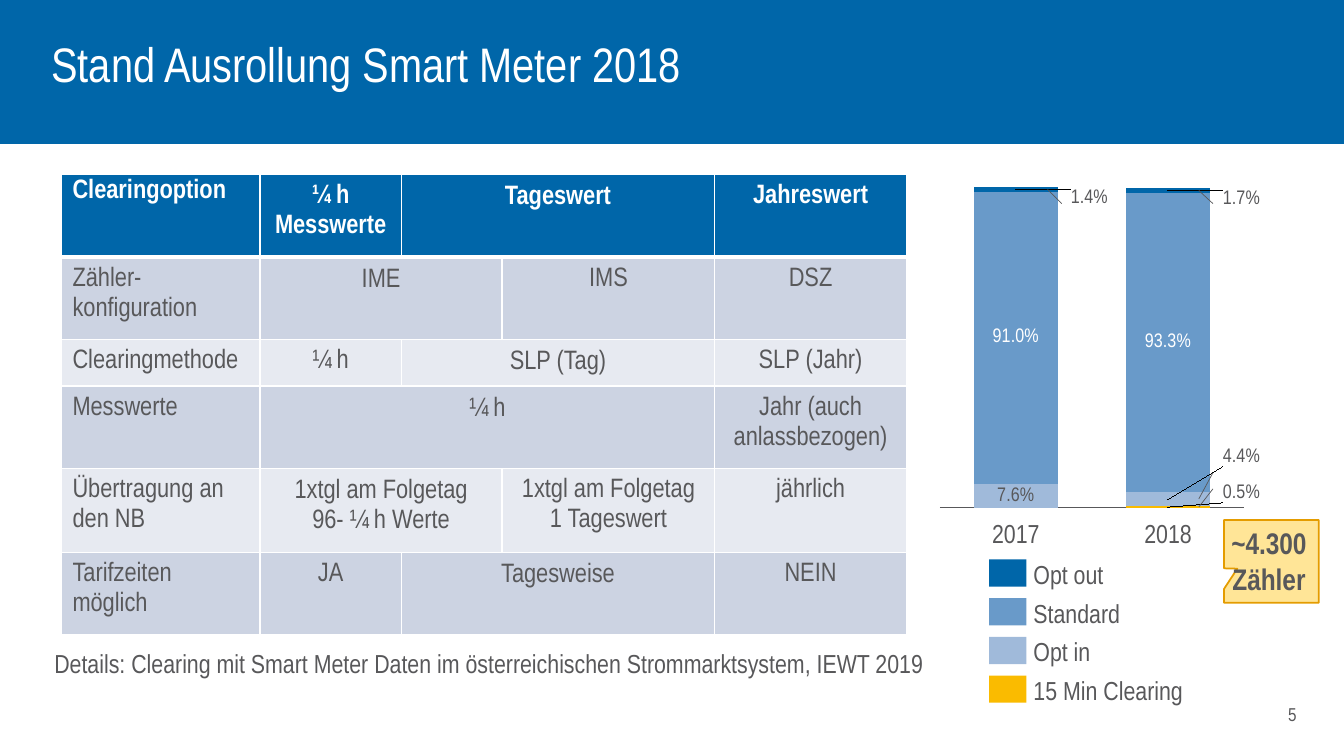
from pptx import Presentation, oxml
from pptx import util as u
from pptx.chart import data as chart_data
from pptx.dml import color as dml
from pptx.enum import chart as charts, shapes, text
from pptx.oxml import ns

FONT = "Arial Narrow"
COLORS = {"blue": "0066A9", "mid": "699AC9", "light": "A0BADA", "yellow": "FABB00",
          "gray": "58585A", "white": "FFFFFF", "band": "CCD3E2", "pale": "E7EAF1",
          "note": "FFE597", "note_line": "E49C00"}
RGB = {name: dml.RGBColor.from_string(value) for name, value in COLORS.items()}
LEFT, CENTER, RIGHT = text.PP_ALIGN.LEFT, text.PP_ALIGN.CENTER, text.PP_ALIGN.RIGHT
MIDDLE, TOP = text.MSO_ANCHOR.MIDDLE, text.MSO_ANCHOR.TOP

presentation = Presentation()
presentation.slide_width, presentation.slide_height = u.Inches(13.33), u.Inches(7.5)
slide = presentation.slides.add_slide(presentation.slide_layouts[5])


def write(frame, content, size, color="gray", align=LEFT, bold=False, spacing=None,
          margins=(0, 0, 0, 0), anchor=TOP, wrap=True):
    frame.text = content
    sides = ("margin_left", "margin_top", "margin_right", "margin_bottom")
    settings = dict(zip(sides, map(u.Inches, margins)))
    settings.update(vertical_anchor=anchor, word_wrap=wrap)
    for name, value in settings.items():
        setattr(frame, name, value)
    for paragraph in frame.paragraphs:
        paragraph.alignment = align
        paragraph.line_spacing = spacing
        for name, value in {"name": FONT, "size": u.Pt(size), "bold": bold}.items():
            setattr(paragraph.font, name, value)
        paragraph.font.color.rgb = RGB[color]


def add_box(kind, left, top, width, height, fill, line=None, line_width=1):
    shape = slide.shapes.add_shape(kind, *map(u.Inches, (left, top, width, height)))
    shape.shadow.inherit = False
    shape.fill.solid()
    shape.fill.fore_color.rgb = RGB[fill]
    if line:
        shape.line.color.rgb = RGB[line]
        shape.line.width = u.Pt(line_width)
    else:
        shape.line.fill.background()
    return shape


# Title on a blue band
title = slide.shapes.title
title.left, title.top = u.Inches(0.51), u.Inches(0.39)
title.width, title.height = u.Inches(10.92), u.Inches(0.52)
write(title.text_frame, "Stand Ausrollung Smart Meter 2018", 34.6, "white",
      margins=(0, 0, 0, 0.04), anchor=MIDDLE)
title.text_frame.auto_size = text.MSO_AUTO_SIZE.NONE
band = add_box(shapes.MSO_SHAPE.RECTANGLE, 0, 0, 13.33, 1.42, "blue", "blue")
title.element.addprevious(band.element)

# Table: each entry is text and number of columns covered
ROWS = [
    [("Clearingoption", 1), ("¼ h Messwerte", 1), ("Tageswert", 2), ("Jahreswert", 1)],
    [("Zähler-konfiguration", 1), ("IME", 2), ("IMS", 1), ("DSZ", 1)],
    [("Clearingmethode", 1), ("¼ h", 1), ("SLP (Tag)", 2), ("SLP (Jahr)", 1)],
    [("Messwerte", 1), ("¼ h", 3), ("Jahr (auch anlassbezogen)", 1)],
    [("Übertragung an den NB", 1), ("1xtgl am Folgetag\n96- ¼ h Werte", 2),
     ("1xtgl am Folgetag\n1 Tageswert", 1), ("jährlich", 1)],
    [("Tarifzeiten möglich", 1), ("JA", 1), ("Tagesweise", 2), ("NEIN", 1)],
]
WIDTHS = [1.97, 1.4, 1, 2.11, 1.9]
HEIGHTS = [0.82, 0.82, 0.46, 0.82, 0.83, 0.82]
table = slide.shapes.add_table(len(ROWS), len(WIDTHS), u.Inches(0.61), u.Inches(1.73),
                               u.Inches(8.38), u.Inches(4.57)).table
table.horz_banding = False
for column, width in zip(table.columns, WIDTHS):
    column.width = u.Inches(width)
for row, (entries, height) in enumerate(zip(ROWS, HEIGHTS)):
    table.rows[row].height = u.Inches(height)
    fill = "blue" if row == 0 else "band" if row % 2 else "pale"
    for cell in table.rows[row].cells:
        properties = cell._tc.get_or_add_tcPr()
        for side in "LRTB":
            heavy = (row, side) in [(0, "B"), (1, "T")]
            properties.append(oxml.parse_xml(
                f'<a:ln{side} {ns.nsdecls("a")} w="{u.Pt(3 if heavy else 1)}"><a:solidFill>'
                f'<a:srgbClr val="{COLORS["white"]}"/></a:solidFill></a:ln{side}>'))
        cell.fill.solid()
        cell.fill.fore_color.rgb = RGB[fill]
    column = 0
    for content, span in entries:
        cell = table.cell(row, column)
        if span > 1:
            cell.merge(table.cell(row, column + span - 1))
        write(cell.text_frame, content, 19, "gray" if row else "white",
              CENTER if column else LEFT, bold=row == 0,
              spacing=None if row == column == 0 else 1.2)
        side, edge = (0.12, 0.06) if span > 1 else (0.11, 0.05)
        for name, value in {"margin_left": side, "margin_right": side,
                            "margin_top": edge, "margin_bottom": edge}.items():
            setattr(cell, name, u.Inches(value))
        column += span

# Page number
page = slide.shapes.add_textbox(*map(u.Inches, (11.29, 6.95, 1.57, 0.26)))
write(page.text_frame, "5", 13.3, align=RIGHT, anchor=MIDDLE)

# Stacked chart: values, bar colours, label colours, label offsets per layer
LAYERS = [
    ((7.6, 0.5), ("light", "yellow"), ("gray", "gray"), (None, (0.178, -0.04))),
    ((91, 4.4), ("mid", "light"), ("white", "gray"), (None, (0.178, -0.123))),
    ((1.4, 93.3), ("blue", "mid"), ("gray", "white"), ((0.178, 0.025), None)),
    ((None, 1.7), ("blue", "blue"), ("gray", "gray"), (None, (0.178, 0.025))),
]
YEARS = ["2017", "2018"]
shares = chart_data.CategoryChartData(number_format='0.0"%"')
shares.categories = YEARS
for number, layer in enumerate(LAYERS, 1):
    shares.add_series(f"Series {number}", layer[0])
chart = slide.shapes.add_chart(charts.XL_CHART_TYPE.COLUMN_STACKED,
                               *map(u.Inches, (8.78, 1.74, 4.1, 3.42)), shares).chart
chart.has_legend = chart.has_title = False
chart.font.name, chart.font.size = FONT, u.Pt(10)
chart.font.color.rgb = RGB["gray"]
plot = chart.plots[0]
for name, value in {"gap_width": 80, "overlap": 100, "vary_by_categories": False}.items():
    setattr(plot, name, value)
for name, value in {"minimum_scale": 0, "maximum_scale": 100, "visible": False,
                    "has_major_gridlines": False}.items():
    setattr(chart.value_axis, name, value)
axis = chart.category_axis
axis.tick_label_position = charts.XL_TICK_LABEL_POSITION.NONE
axis.major_tick_mark = axis.minor_tick_mark = charts.XL_TICK_MARK.NONE
axis.format.line.color.rgb = RGB["gray"]
axis.format.line.width = u.Pt(0.75)

plot_area = chart.element.xpath("c:chart/c:plotArea")[0]
for layout in plot_area.xpath("c:layout"):
    plot_area.remove(layout)
plot_area.insert(0, oxml.parse_xml(
    f'<c:layout {ns.nsdecls("c")}><c:manualLayout><c:layoutTarget val="inner"/>'
    '<c:xMode val="edge"/><c:yMode val="edge"/><c:x val="0.132"/><c:y val="0.035"/>'
    '<c:w val="0.736"/><c:h val="0.93"/></c:manualLayout></c:layout>'))

for series, (values, fills, label_colors, offsets) in zip(plot.series, LAYERS):
    series.format.fill.solid()
    series.format.fill.fore_color.rgb = RGB[fills[0]]
    for index, value in enumerate(values):
        if value is None:
            continue
        point = series.points[index]
        point.format.fill.solid()
        point.format.fill.fore_color.rgb = RGB[fills[index]]
        font = point.data_label.font
        font.name, font.size = FONT, u.Pt(14)
        font.color.rgb = RGB[label_colors[index]]
        label = series.data_labels._element.xpath(f"c:dLbl[c:idx/@val='{index}']")[0]
        label.insert(1, oxml.parse_xml(
            f'<c:numFmt {ns.nsdecls("c")} formatCode="0.0&quot;%&quot;" sourceLinked="0"/>'))
        if offsets[index]:
            x, y = offsets[index]
            label.insert(1, oxml.parse_xml(
                f'<c:layout {ns.nsdecls("c")}><c:manualLayout><c:x val="{x}"/>'
                f'<c:y val="{y}"/></c:manualLayout></c:layout>'))

# Leader lines beside the bars
for ends in [(12.03, 4.85, 11.89, 5.03), (10.53, 2.02, 10.39, 1.88),
             (12.03, 2.02, 11.89, 1.89), (12.03, 4.69, 11.89, 4.95)]:
    leader = slide.shapes.add_connector(shapes.MSO_CONNECTOR.STRAIGHT, *map(u.Inches, ends))
    leader.line.color.rgb = RGB["gray"]
    leader.line.width = u.Pt(0.5)
    leader.element.spPr.append(oxml.parse_xml(f'<a:effectLst {ns.nsdecls("a")}/>'))

# Years below the bars
for index, year in enumerate(YEARS):
    box = slide.shapes.add_textbox(*map(u.Inches, (9.83 + 1.51 * index, 5.13, 0.49, 0.31)))
    write(box.text_frame, year, 18.6, align=CENTER, wrap=False)

# Callout
callout = add_box(shapes.MSO_SHAPE.RECTANGULAR_CALLOUT, 12.14, 5.16, 0.94, 0.82,
                  "note", "note_line", 1.25)
callout.adjustments[0], callout.adjustments[1] = -0.36, 0.088
write(callout.text_frame, "~4.300 Zähler", 21.3, align=CENTER, bold=True,
      margins=(0.05, 0.05, 0.1, 0.05))

# Legend
LEGEND = [("Opt out", "blue"), ("Standard", "mid"), ("Opt in", "light"),
          ("15 Min Clearing", "yellow")]
for index, (name, color) in enumerate(LEGEND):
    top = 5.55 + 0.384 * index
    add_box(shapes.MSO_SHAPE.RECTANGLE, 9.81, top, 0.37, 0.27, color)
    box = slide.shapes.add_textbox(*map(u.Inches, (10.25, top - 0.01, 1.7, 0.31)))
    write(box.text_frame, name, 18.6, anchor=MIDDLE)

# Reference line
details = slide.shapes.add_textbox(*map(u.Inches, (0.44, 6.37, 9.06, 0.42)))
write(details.text_frame, "Details: Clearing mit Smart Meter Daten im österreichischen "
      "Strommarktsystem, IEWT 2019", 18.6, margins=(0.1, 0.05, 0.1, 0.05))

presentation.save("out.pptx")
